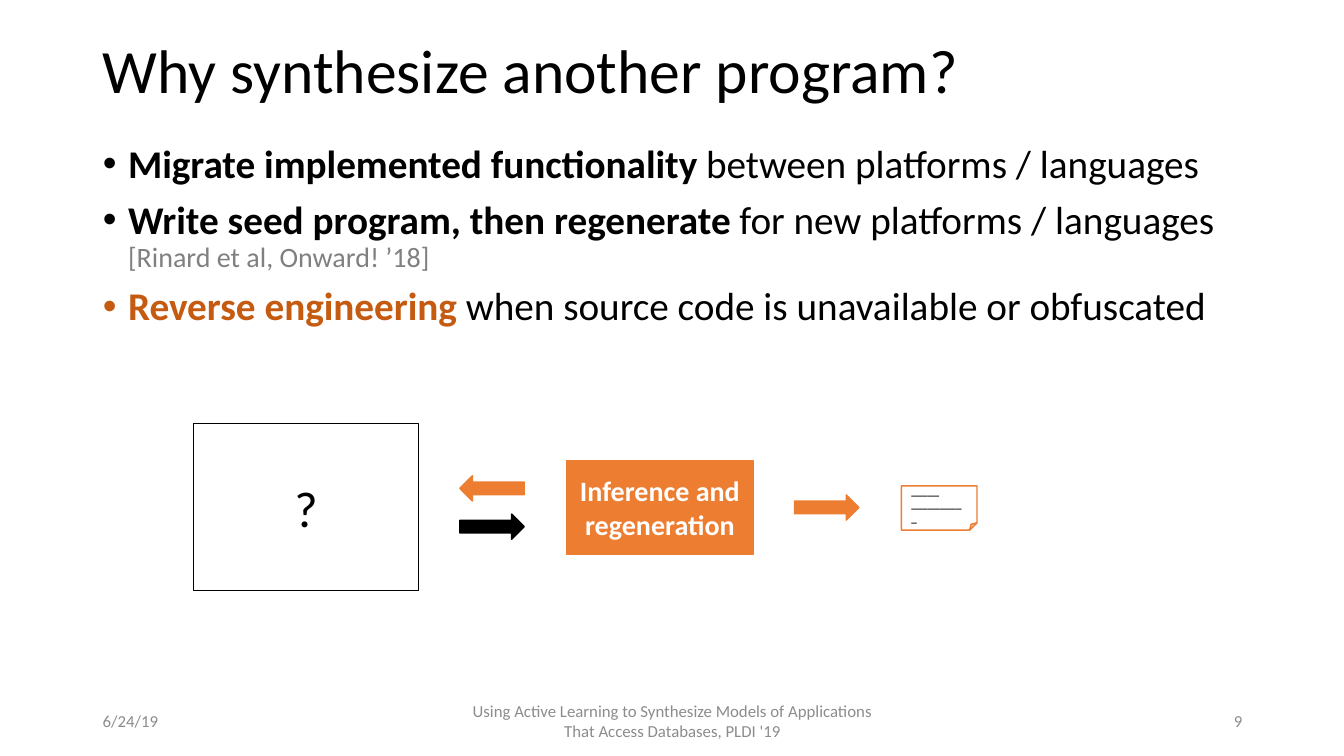
from dataclasses import dataclass
from typing import Optional

from pptx import Presentation
from pptx.dml.color import RGBColor
from pptx.enum import shapes, text
from pptx.util import Inches, Pt

SHAPE = shapes.MSO_SHAPE
ALIGN = text.PP_ALIGN
MIDDLE = text.MSO_ANCHOR.MIDDLE


@dataclass(frozen=True)
class Theme:
    font: str = "Calibri"
    black: str = "000000"
    white: str = "FFFFFF"
    orange: str = "ED7D31"
    dark_orange: str = "C55A11"
    citation_gray: str = "808080"
    footer_gray: str = "8C8C8C"
    title_size: int = 44
    question_size: int = 36
    body_size: int = 28
    label_size: int = 20
    footer_size: int = 12
    code_size: int = 8


THEME = Theme()


@dataclass(frozen=True)
class Bullet:
    lead: str
    rest: str
    lead_color: str = THEME.black
    citation: str = ""


@dataclass(frozen=True)
class Footer:
    left: float
    width: float
    words: str
    alignment: ALIGN


@dataclass(frozen=True)
class Node:
    """A shape of the diagram, with its optional label."""
    kind: SHAPE
    left: float
    top: float
    width: float
    height: float
    fill: str
    line: str
    rotation: float = 0
    label: str = ""
    size: int = THEME.label_size
    color: str = THEME.black
    bold: bool = False
    alignment: ALIGN = ALIGN.CENTER


@dataclass(frozen=True)
class Arrow:
    left: float
    top: float
    color: str
    rotation: float = 0

    def node(self) -> Node:
        return Node(SHAPE.RIGHT_ARROW, self.left, self.top, 0.64, 0.25,
                    self.color, self.color, self.rotation)


BULLETS = [
    Bullet("Migrate implemented functionality", " between platforms / languages"),
    Bullet("Write seed program, then regenerate ", "for new platforms / languages",
           citation="[Rinard et al, Onward! ’18]"),
    Bullet("Reverse engineering ", "when source code is unavailable or obfuscated",
           THEME.dark_orange),
]
FOOTERS = [
    Footer(0.92, 3, "6/24/19", ALIGN.LEFT),
    Footer(4.42, 4.5, "Using Active Learning to Synthesize Models of Applications "
           "That Access Databases, PLDI '19", ALIGN.CENTER),
    Footer(9.42, 3, "9", ALIGN.RIGHT),
]
NODES = [
    Node(SHAPE.RECTANGLE, 5.62, 4.57, 1.85, 0.93, THEME.orange, THEME.orange,
         label="Inference and regeneration", color=THEME.white, bold=True),
    Arrow(4.56, 5.1, THEME.black).node(),
    Arrow(4.56, 4.72, THEME.orange, 180).node(),
    Arrow(7.88, 4.91, THEME.orange).node(),
    Node(SHAPE.FOLDED_CORNER, 8.94, 4.82, 0.75, 0.44, THEME.white, THEME.orange,
         label="_____\n__________", size=THEME.code_size, bold=True,
         alignment=ALIGN.LEFT),
    Node(SHAPE.RECTANGLE, 1.92, 4.2, 2.23, 1.66, THEME.white, THEME.black,
         label="?", size=THEME.question_size),
]


def style_font(font, size: int, color: str, bold: Optional[bool] = None) -> None:
    font.name = THEME.font
    font.size = Pt(size)
    font.color.rgb = RGBColor.from_string(color)
    font.bold = bold


def place(shape, left: float, top: float, width: float, height: float) -> None:
    shape.left, shape.top = Inches(left), Inches(top)
    shape.width, shape.height = Inches(width), Inches(height)


def write(frame, words: str, size: int, color: str, alignment: ALIGN,
          bold: bool = False) -> None:
    """Fill a vertically centred frame, one paragraph per line of words."""
    frame.word_wrap = True
    frame.auto_size = text.MSO_AUTO_SIZE.NONE
    frame.vertical_anchor = MIDDLE
    frame.text = words
    for paragraph in frame.paragraphs:
        paragraph.alignment = alignment
        style_font(paragraph.font, size, color, bold)


def add_run(paragraph, words: str, size: int, color: str, bold: bool = False) -> None:
    run = paragraph.add_run()
    run.text = words
    style_font(run.font, size, color, bold)


def fill_title(title) -> None:
    place(title, 0.92, 0, 11.5, 1.45)
    write(title.text_frame, "Why synthesize another program?",
          THEME.title_size, THEME.black, ALIGN.LEFT)
    title.text_frame.paragraphs[0].line_spacing = 0.9


def fill_body(body) -> None:
    place(body, 0.92, 1.38, 11.5, 4.76)
    frame = body.text_frame
    frame.auto_size = text.MSO_AUTO_SIZE.NONE
    for index, bullet in enumerate(BULLETS):
        paragraph = frame.add_paragraph() if index else frame.paragraphs[0]
        paragraph.line_spacing = 0.9
        paragraph.space_before = Pt(10)
        properties = paragraph._p.get_or_add_pPr()
        properties.set("marL", str(Inches(0.25)))
        properties.set("indent", str(-Inches(0.25)))
        add_run(paragraph, bullet.lead, THEME.body_size, bullet.lead_color, True)
        add_run(paragraph, bullet.rest, THEME.body_size, THEME.black)
        if bullet.citation:
            paragraph.add_line_break()
            add_run(paragraph, bullet.citation, THEME.label_size, THEME.citation_gray)


def add_footer(slide, footer: Footer) -> None:
    box = slide.shapes.add_textbox(Inches(footer.left), Inches(6.95),
                                   Inches(footer.width), Inches(0.4))
    write(box.text_frame, footer.words, THEME.footer_size, THEME.footer_gray,
          footer.alignment)


def add_node(slide, node: Node) -> None:
    shape = slide.shapes.add_shape(node.kind, Inches(node.left), Inches(node.top),
                                   Inches(node.width), Inches(node.height))
    shape.shadow.inherit = False
    shape.rotation = node.rotation
    shape.fill.solid()
    shape.fill.fore_color.rgb = RGBColor.from_string(node.fill)
    shape.line.color.rgb = RGBColor.from_string(node.line)
    shape.line.width = Pt(1)
    if node.label:
        write(shape.text_frame, node.label, node.size, node.color,
              node.alignment, node.bold)


def main() -> None:
    presentation = Presentation()
    presentation.slide_width = Inches(13.33)
    presentation.slide_height = Inches(7.5)
    slide = presentation.slides.add_slide(presentation.slide_layouts[1])
    fill_title(slide.shapes.title)
    fill_body(slide.placeholders[1])
    for footer in FOOTERS:
        add_footer(slide, footer)
    for node in NODES:
        add_node(slide, node)
    presentation.save("out.pptx")


if __name__ == "__main__":
    main()
